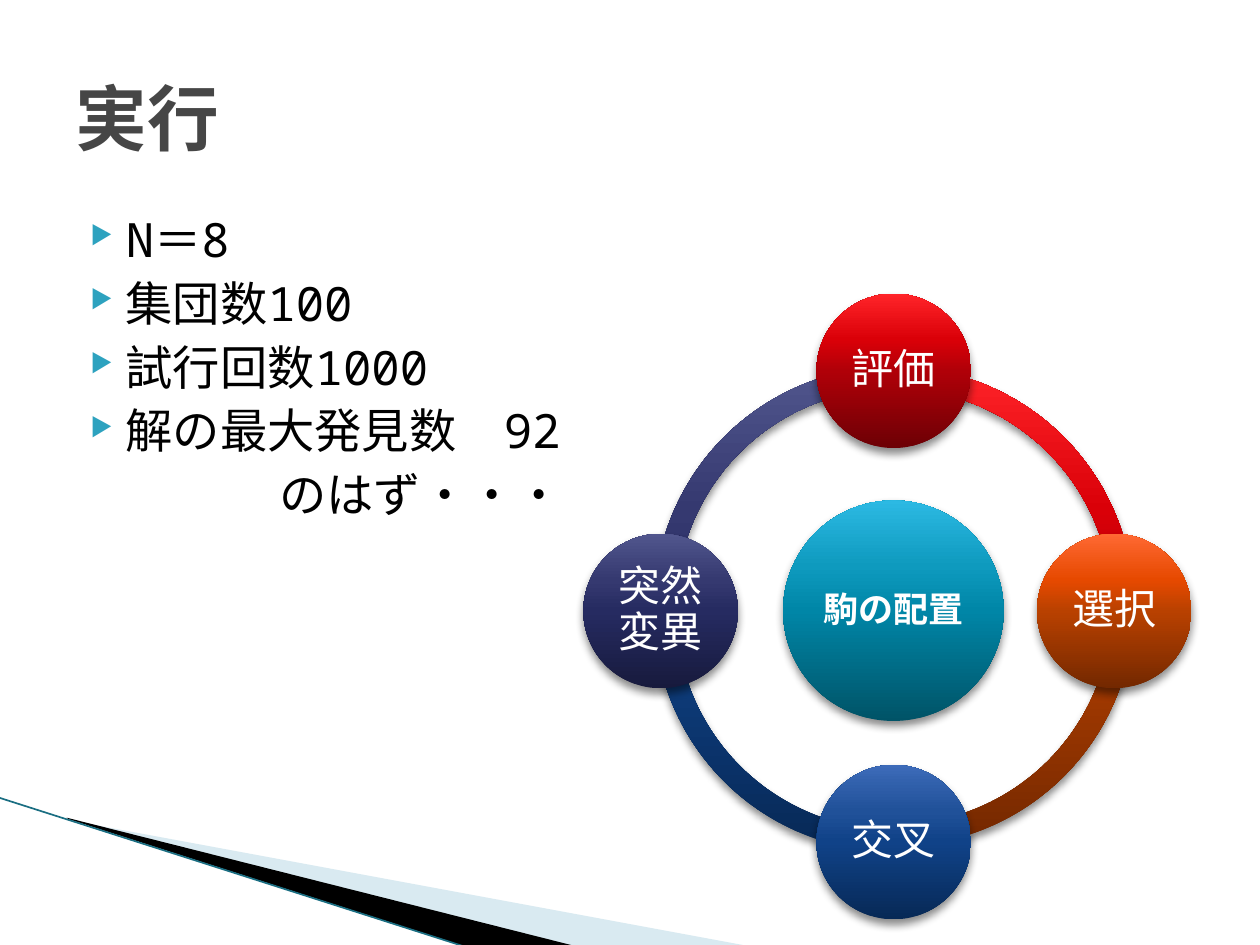
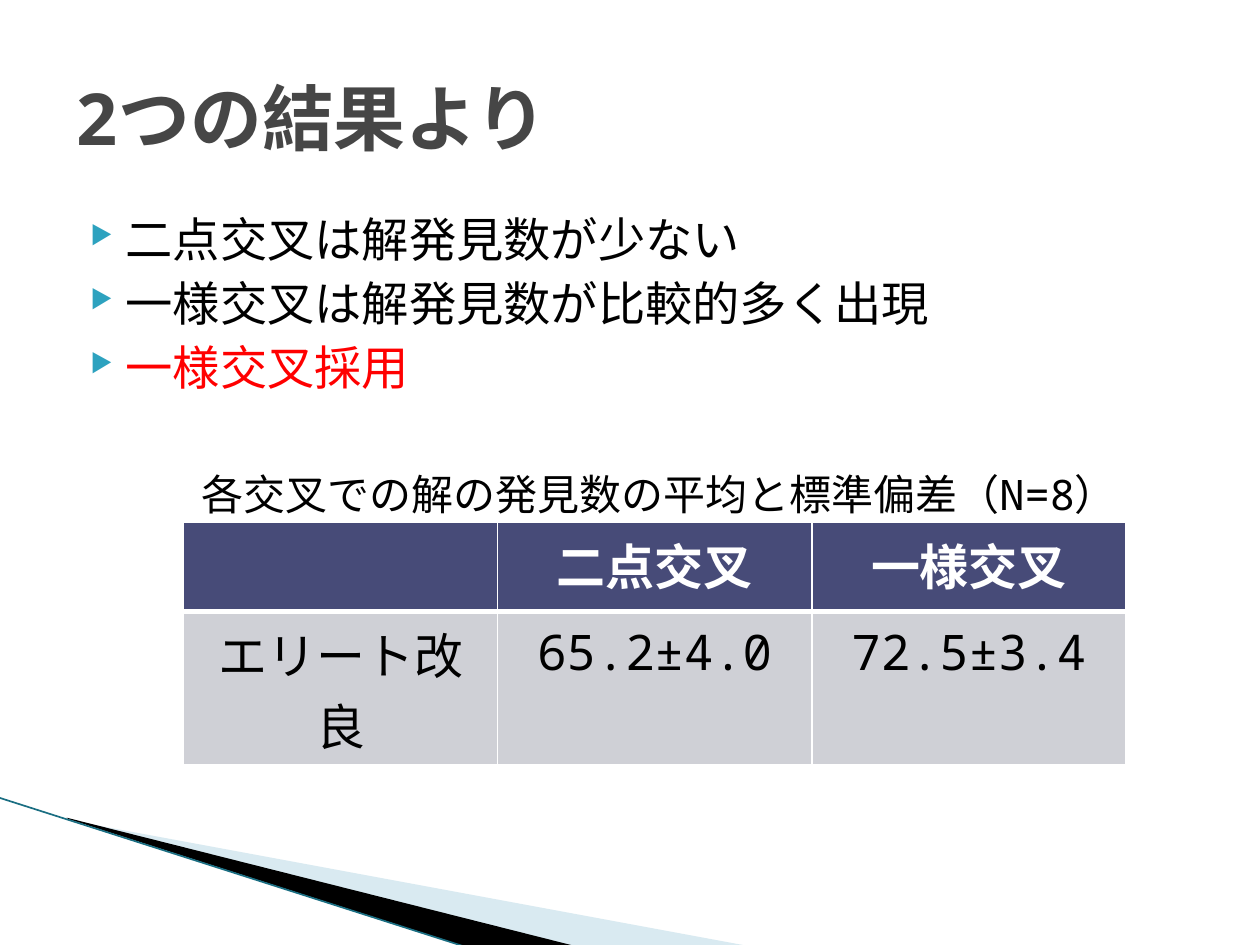
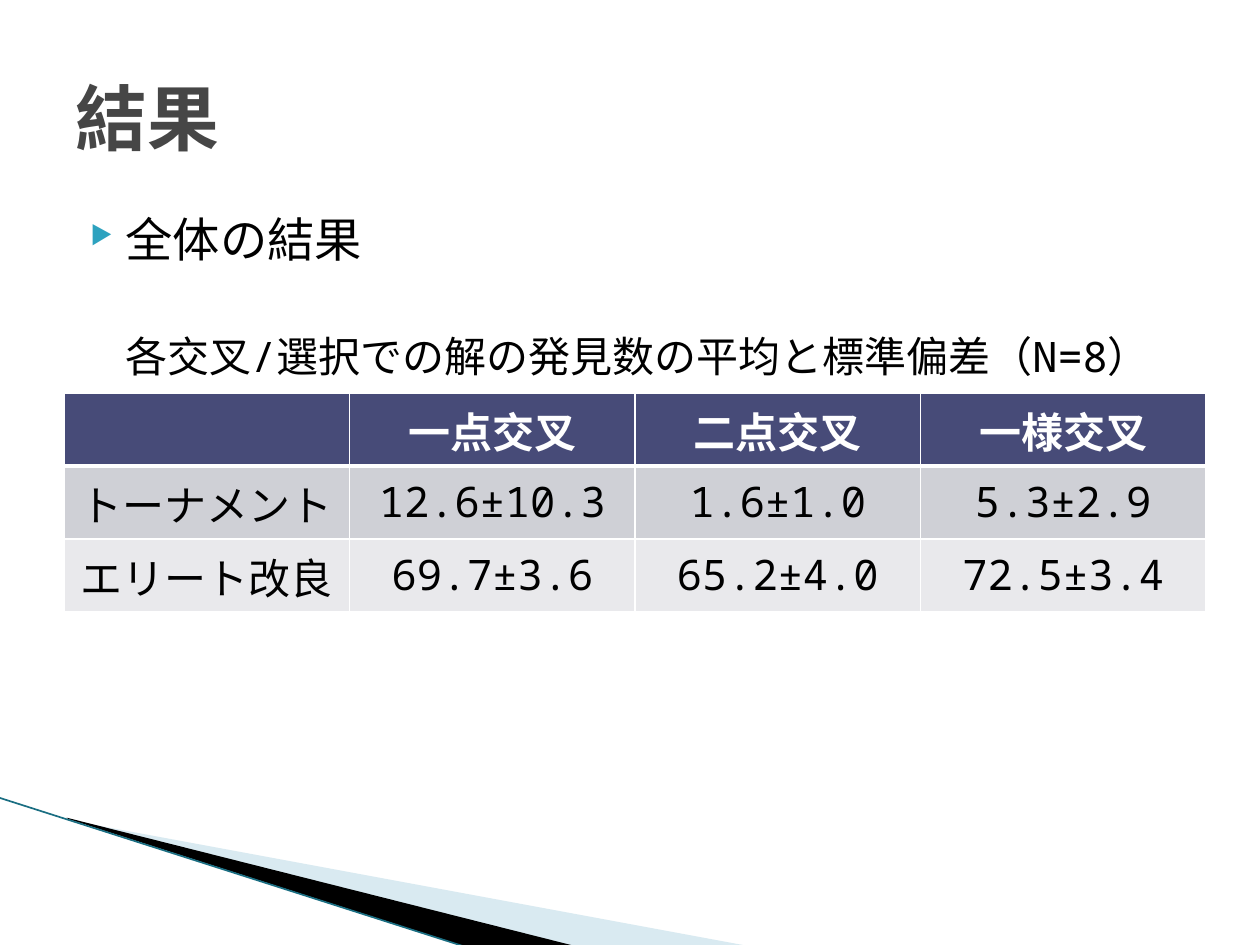
from lxml import etree
from pptx import Presentation
from pptx.dml.color import RGBColor
from pptx.enum.shapes import MSO_CONNECTOR, MSO_SHAPE
from pptx.enum.text import MSO_ANCHOR, MSO_AUTO_SIZE, PP_ALIGN
from pptx.oxml.ns import qn
from pptx.util import Pt

LEFT, CENTER = PP_ALIGN.LEFT, PP_ALIGN.CENTER
MIDDLE = MSO_ANCHOR.MIDDLE
NO_AUTOFIT = MSO_AUTO_SIZE.NONE
STRAIGHT = MSO_CONNECTOR.STRAIGHT
OVAL, BLOCK_ARC = MSO_SHAPE.OVAL, MSO_SHAPE.BLOCK_ARC

FONT = "Noto Sans Mono"
BLACK = RGBColor(0x00, 0x00, 0x00)
WHITE = RGBColor(0xFF, 0xFF, 0xFF)
RED = RGBColor(0xFF, 0x00, 0x00)
TITLE_GRAY = RGBColor(0x46, 0x46, 0x46)
BULLET_TEAL = RGBColor(0x2D, 0xA2, 0xBF)
PALE_BLUE = RGBColor(0xA0, 0xCB, 0xDC)
EDGE_TEAL = RGBColor(0x1A, 0x6E, 0x82)
HEADER_NAVY = RGBColor(0x47, 0x4B, 0x78)
ROW_GRAYS = (RGBColor(0xCF, 0xD0, 0xD6), RGBColor(0xE9, 0xE9, 0xEC))

GRADIENT_STOPS = (0, 50, 70, 100)
RED_GRADIENT = ("6D0005", "B00008", "DA0008", "FF2429")
ORANGE_GRADIENT = ("732800", "B94100", "E64900", "FF6933")
BLUE_GRADIENT = ("072956", "104288", "205199", "3D6BB9")
NAVY_GRADIENT = ("171A3D", "262B61", "353970", "51568D")
TEAL_GRADIENT = ("005367", "0086A7", "0E9ABE", "2CB9E3")

TITLE_BOX = (36, 21.6, 648, 90)
BODY_BOX = (36, 116.64, 648, 356.4)
BODY_SIZE, CAPTION_SIZE = 27, 24
BODY_SPACE = 4
BULLET_MARGIN, BULLET_HANG, BULLET_PERCENT = 28.8, -20.16, 54

BANDS = [
    ([(39.6, 468.72), (428.4, 540.72), (328.32, 540.72), (39.6, 468)], PALE_BLUE, 40),
    ([(38.16, 467.28), (329.04, 540.72), (267.84, 541.44), (38.88, 468)], BLACK, 100),
]
BAND_EDGE = (-0.72, 455.76, 267.12, 541.44)

RUN_BULLETS = [("N＝8", BLACK), ("集団数100", BLACK), ("試行回数1000", BLACK),
               ("解の最大発見数　92", BLACK)]
RUN_NOTE = {"text": "のはず・・・", "size": BODY_SIZE, "margin": 116.64}

RING_LEFT, RING_SIZE, RING_THICKNESS = 373.68, 274.32, 0.046
NODE_SIZE, HUB_SIZE = 88.3, 126
HUB = ("駒の配置", 447.5, 286)
QUARTER_TURN = 54
CYCLE = [
    ("評価", 466.56, 167.76, RED_GRADIENT, 209.52),
    ("選択", 592.56, 305, ORANGE_GRADIENT, 209.52),
    ("交叉", 466.56, 437.04, BLUE_GRADIENT, 212.4),
    ("突然変異", 333.36, 305, NAVY_GRADIENT, 209.52),
]

COMPARISON_BULLETS = [("二点交叉は解発見数が少ない", BLACK),
                      ("一様交叉は解発見数が比較的多く出現", BLACK),
                      ("一様交叉採用", RED)]
COMPARISON_CAPTION = {"text": "各交叉での解の発見数の平均と標準偏差（N=8）",
                      "margin": 72, "space": 42.4}
COMPARISON_ROWS = [["", "二点交叉", "一様交叉"],
                   ["エリート改良", "65.2±4.0", "72.5±3.4"]]

OVERALL_BULLETS = [("全体の結果", BLACK)]
OVERALL_CAPTION = {"text": "各交叉/選択での解の発見数の平均と標準偏差（N=8）",
                   "margin": 8.64, "space": 36.4, "align": CENTER}
OVERALL_ROWS = [["", "一点交叉", "二点交叉", "一様交叉"],
                ["トーナメント", "12.6±10.3", "1.6±1.0", "5.3±2.9"],
                ["エリート改良", "69.7±3.6", "65.2±4.0", "72.5±3.4"]]


def points(values):
    return [Pt(value) for value in values]


def add_element(parent, tag, **attributes):
    element = etree.SubElement(parent, qn(tag))
    for name, value in attributes.items():
        element.set(name, str(value))
    return element


def add_run(paragraph, text, size, color, bold=False, east_asian=True):
    run = paragraph.add_run()
    run.text = text
    run.font.size = Pt(size)
    run.font.bold = bold
    run.font.color.rgb = color
    run.font.name = FONT
    if east_asian:
        add_element(run.font._element, "a:ea", typeface=FONT)


def add_bands(slide):
    for corners, color, opacity in BANDS:
        start, *others = [points(corner) for corner in corners]
        builder = slide.shapes.build_freeform(*start, scale=1.0)
        builder.add_line_segments(others, close=True)
        band = builder.convert_to_shape()
        band.shadow.inherit = False
        band.line.fill.background()
        band.fill.solid()
        band.fill.fore_color.rgb = color
        if opacity < 100:
            color_element = band.element.spPr.find(qn("a:solidFill"))[0]
            add_element(color_element, "a:alpha", val=opacity * 1000)
    edge = slide.shapes.add_connector(STRAIGHT, *points(BAND_EDGE))
    edge.line.color.rgb = EDGE_TEAL
    edge.line.width = Pt(0.95)
    add_element(edge.element.spPr, "a:effectLst")


def add_titled_slide(presentation, text):
    slide = presentation.slides.add_slide(presentation.slide_layouts[5])
    add_bands(slide)
    title = slide.shapes.title
    title.left, title.top, title.width, title.height = points(TITLE_BOX)
    frame = title.text_frame
    frame.auto_size = NO_AUTOFIT
    frame.vertical_anchor = MIDDLE
    paragraph = frame.paragraphs[0]
    paragraph.alignment = LEFT
    add_run(paragraph, text, 41, TITLE_GRAY, bold=True)
    return slide


def set_indent(paragraph, margin, hang=0):
    properties = paragraph._p.get_or_add_pPr()
    properties.set("marL", str(Pt(margin)))
    properties.set("indent", str(Pt(hang)))
    return properties


def add_body(slide, bullets, closing):
    frame = slide.shapes.add_textbox(*points(BODY_BOX)).text_frame
    frame.word_wrap = True
    for index, (text, color) in enumerate(bullets):
        paragraph = frame.add_paragraph() if index else frame.paragraphs[0]
        properties = set_indent(paragraph, BULLET_MARGIN, BULLET_HANG)
        bullet_color = add_element(properties, "a:buClr")
        add_element(bullet_color, "a:srgbClr", val=BULLET_TEAL)
        add_element(properties, "a:buSzPct", val=BULLET_PERCENT * 1000)
        add_element(properties, "a:buChar", char="▶")
        paragraph.space_before = Pt(BODY_SPACE if index else 0)
        add_run(paragraph, text, BODY_SIZE, color)
    paragraph = frame.add_paragraph()
    set_indent(paragraph, closing["margin"])
    paragraph.alignment = closing.get("align", LEFT)
    paragraph.space_before = Pt(closing.get("space", BODY_SPACE))
    add_run(paragraph, closing["text"], closing.get("size", CAPTION_SIZE), BLACK)


def add_glossy_shape(slide, kind, left, top, size, gradient):
    shape = slide.shapes.add_shape(kind, *points((left, top, size, size)))
    shape.line.fill.background()
    shape.fill.gradient()
    shape.fill.gradient_angle = 90
    properties = shape.element.spPr
    stops = properties.find(qn("a:gradFill")).find(qn("a:gsLst"))
    for stop in list(stops):
        stops.remove(stop)
    for position, color in zip(GRADIENT_STOPS, gradient):
        stop = add_element(stops, "a:gs", pos=position * 1000)
        add_element(stop, "a:srgbClr", val=color)
    shape.shadow.inherit = False
    shadow = add_element(properties.find(qn("a:effectLst")), "a:outerShdw",
                         blurRad=Pt(5), dist=Pt(3), dir=5400000, rotWithShape=0)
    shadow_color = add_element(shadow, "a:srgbClr", val=BLACK)
    add_element(shadow_color, "a:alpha", val=45000)
    return shape


def add_node(slide, text, left, top, size, gradient, font_size, bold=False):
    node = add_glossy_shape(slide, OVAL, left, top, size, gradient)
    frame = node.text_frame
    frame.word_wrap = True
    frame.vertical_anchor = MIDDLE
    frame.margin_left = frame.margin_right = Pt(2)
    frame.margin_top = frame.margin_bottom = Pt(2)
    paragraph = frame.paragraphs[0]
    paragraph.alignment = CENTER
    paragraph.line_spacing = 0.9
    add_run(paragraph, text, font_size, WHITE, bold)


def add_cycle(slide):
    for index, (_, _, _, gradient, ring_top) in enumerate(CYCLE):
        arc = add_glossy_shape(slide, BLOCK_ARC, RING_LEFT, ring_top, RING_SIZE, gradient)
        start = (index + 3) % 4 * QUARTER_TURN
        arc.adjustments[0] = start
        arc.adjustments[1] = (start + QUARTER_TURN) % (4 * QUARTER_TURN)
        arc.adjustments[2] = RING_THICKNESS
    for text, left, top, gradient, _ in CYCLE:
        add_node(slide, text, left, top, NODE_SIZE, gradient, 24)
    add_node(slide, *HUB, HUB_SIZE, TEAL_GRADIENT, 20, bold=True)


def set_borders(cell, top, bottom):
    properties = cell._tc.get_or_add_tcPr()
    for side, width in (("L", 1), ("R", 1), ("T", top), ("B", bottom)):
        line = add_element(properties, f"a:ln{side}", w=Pt(width))
        add_element(add_element(line, "a:solidFill"), "a:srgbClr", val=WHITE)


def add_results_table(slide, rows, left, top, column_width, row_heights, size):
    row_count, column_count = len(rows), len(rows[0])
    table = slide.shapes.add_table(
        row_count, column_count,
        *points((left, top, column_width * column_count, sum(row_heights)))).table
    for row_index, row in enumerate(rows):
        is_header = row_index == 0
        table.rows[row_index].height = Pt(row_heights[row_index])
        for column_index, text in enumerate(row):
            cell = table.cell(row_index, column_index)
            set_borders(cell, 3 if row_index == 1 else 1, 3 if is_header else 1)
            cell.fill.solid()
            cell.fill.fore_color.rgb = (
                HEADER_NAVY if is_header else ROW_GRAYS[(row_index - 1) % 2])
            if text:
                paragraph = cell.text_frame.paragraphs[0]
                paragraph.alignment = CENTER
                add_run(paragraph, text, size, WHITE if is_header else BLACK,
                        is_header, east_asian=False)


def main():
    """Build the three slides on the genetic search results."""
    presentation = Presentation()
    presentation.slide_width, presentation.slide_height = Pt(720), Pt(540)

    slide = add_titled_slide(presentation, "実行")
    add_body(slide, RUN_BULLETS, RUN_NOTE)
    add_cycle(slide)

    slide = add_titled_slide(presentation, "2つの結果より")
    add_body(slide, COMPARISON_BULLETS, COMPARISON_CAPTION)
    add_results_table(slide, COMPARISON_ROWS, 104.9, 298.4, 179.5, (51.1, 87.5), 28)

    slide = add_titled_slide(presentation, "結果")
    add_body(slide, OVERALL_BULLETS, OVERALL_CAPTION)
    add_results_table(slide, OVERALL_ROWS, 36.72, 224.64, 163.1, (41.7,) * 3, 24)

    presentation.save("out.pptx")


if __name__ == "__main__":
    main()
